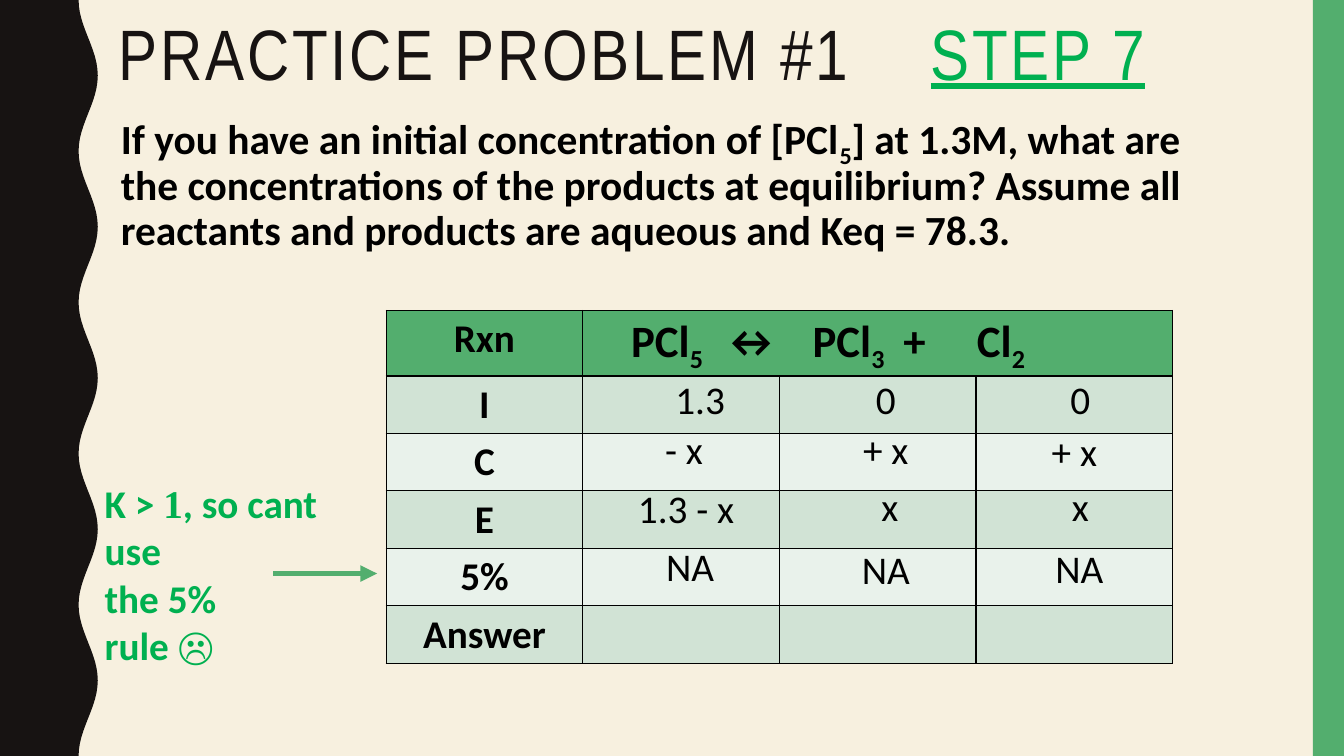
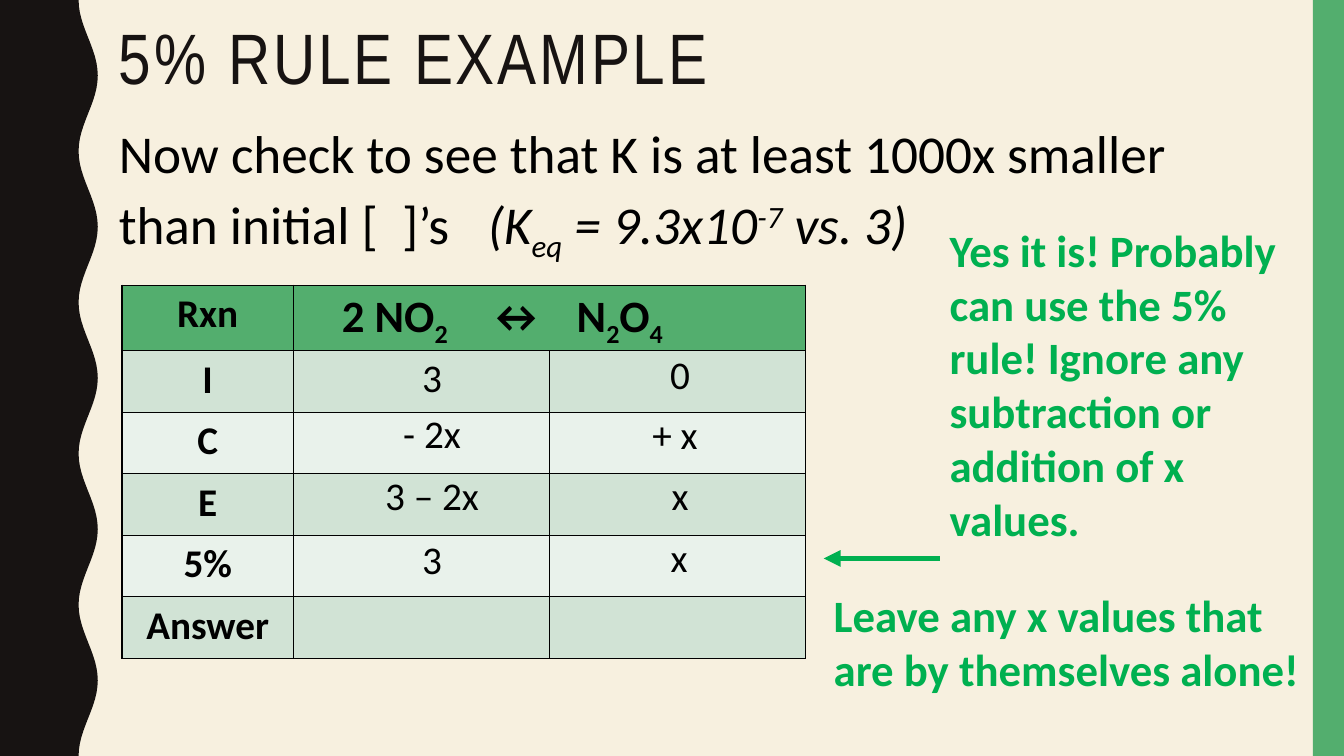
import math
from lxml import etree
from pptx import Presentation
from pptx.util import Inches, Pt
from pptx.dml.color import RGBColor
from pptx.enum import shapes, text
from pptx.oxml import ns

INK, LEAF, NOTE, BLACK = "171312", "53AE6E", "00B050", "000000"
CREAM, DARK, PALE = "F7F0DF", "D1E3D5", "E9F2EB"
WIDE, HIGH = 13.33, 7.5
MID, LEFT = text.PP_ALIGN.CENTER, text.PP_ALIGN.LEFT
TITLE = dict(size=51, font="Arial Narrow", color=INK, space=200, line=0.9)
CALL = dict(color=NOTE, bold=True)


def rgb(code):
    return RGBColor.from_string(code)


def node(up, tag, **attrs):
    return etree.SubElement(up, ns.qn(tag), attrs)


def paint(fill, code):
    fill.solid()
    fill.fore_color.rgb = rgb(code)


def down(words):
    return words, dict(base=-25)


def style(run, size=28, font="Calibri", color=BLACK, bold=False,
          italic=False, under=False, base=0, space=0):
    face = run.font
    face.size, face.name = Pt(size), font
    face.bold, face.italic, face.underline = bold, italic, under
    face.color.rgb = rgb(color)
    props = run._r.get_or_add_rPr()
    if base:
        props.set("baseline", str(base * 1000))
    if space:
        props.set("spc", str(space))


def write(frame, runs, align=LEFT, line=None, before=0, tabs=(), **fmt):
    para = frame.paragraphs[0]
    para.alignment = align
    if line:
        para.line_spacing = line
    if before:
        para.space_before = Pt(before)
    if tabs:
        stops = node(para._p.get_or_add_pPr(), "a:tabLst")
        for stop in tabs:
            node(stops, "a:tab", pos=str(Inches(stop)), algn="l")
    for part in [runs] if isinstance(runs, str) else runs:
        words, extra = (part, {}) if isinstance(part, str) else part
        for i, row in enumerate(words.split("\n")):
            if i:
                para.add_line_break()
            run = para.add_run()
            run.text = row
            style(run, **{**fmt, **extra})


def label(slide, box, runs, **fmt):
    frame = slide.shapes.add_textbox(*map(Inches, box)).text_frame
    frame.word_wrap = True
    write(frame, runs, **fmt)


def plain(shape, code):
    shape.shadow.inherit = False
    paint(shape.fill, code)
    shape.line.fill.background()


def bands(slide):
    steps = 120
    edge = []
    for i in range(steps + 1):
        y = HIGH * i / steps
        x = 0.875 - 0.095 * math.cos(2 * math.pi * y / 1.5)
        edge.append((Inches(x), Inches(y)))
    wave = slide.shapes.build_freeform(0, 0)
    wave.add_line_segments(edge + [(0, Inches(HIGH))], close=True)
    plain(wave.convert_to_shape(), INK)
    box = map(Inches, (13.02, 0, WIDE - 13.02, HIGH))
    plain(slide.shapes.add_shape(shapes.MSO_SHAPE.RECTANGLE, *box), LEAF)


def start(deck, top, runs, **fmt):
    slide = deck.slides.add_slide(deck.slide_layouts[5])
    bands(slide)
    head = slide.shapes.title
    head.left, head.top, head.width, head.height = map(
        Inches, (1.08, top, 11.13, 1.63))
    frame = head.text_frame
    frame.auto_size = text.MSO_AUTO_SIZE.NONE
    frame.vertical_anchor = text.MSO_ANCHOR.TOP
    write(frame, runs, **TITLE, **fmt)
    return slide


def arrow(slide, x, y, end, code):
    link = slide.shapes.add_connector(
        shapes.MSO_CONNECTOR.STRAIGHT, *map(Inches, (x, y, end, y)))
    link.line.color.rgb = rgb(code)
    link.line.width = Pt(4)
    node(link.line._get_or_add_ln(), "a:tailEnd", type="triangle")
    node(link._element.spPr, "a:effectLst")


def border(cell):
    props = cell._tc.get_or_add_tcPr()
    for side in "LRTB":
        rule = node(props, "a:ln" + side, w=str(Pt(1)))
        node(node(rule, "a:solidFill"), "a:srgbClr", val=BLACK)


def chart(slide, x, y, cols, step, head, tabs, values):
    names = ["Rxn", "I", "C", "E", "5%", "Answer"]
    rows = [0.65] + [step] * 5
    box = map(Inches, (x, y, sum(cols), sum(rows)))
    grid = slide.shapes.add_table(len(rows), len(cols), *box).table
    for col, wide in zip(grid.columns, cols):
        col.width = Inches(wide)
    for i, (name, high) in enumerate(zip(names, rows)):
        grid.rows[i].height = Inches(high)
        for j in range(len(cols)):
            cell = grid.cell(i, j)
            border(cell)
            paint(cell.fill, LEAF if i == 0 else DARK if i % 2 else PALE)
        write(grid.cell(i, 0).text_frame, name, align=MID, bold=True)
    span = grid.cell(0, 1)
    span.merge(grid.cell(0, len(cols) - 1))
    span.vertical_anchor = text.MSO_ANCHOR.MIDDLE
    span.margin_left, span.margin_right = Inches(0.48), Inches(0.07)
    span.margin_top = span.margin_bottom = 0
    write(span.text_frame, head, size=32, bold=True, line=1.07, tabs=tabs)
    for words, dx, dy in values:
        label(slide, (x + dx, y + dy, 1.23, 0.57), words, align=MID)


def problem(deck):
    slide = start(deck, 0.14, ["PRACTICE PROBLEM #1\t",
                               ("STEP 7", dict(color=NOTE, under=True))],
                  tabs=[8.05])
    label(slide, (1.1, 1.08, 11.13, 2.08),
          ["If you have an initial concentration of [PCl", down("5"),
           "] at 1.3M, what are the concentrations of the products at "
           "equilibrium? Assume all reactants and products are aqueous "
           "and Keq = 78.3."],
          size=29.6, bold=True, line=0.9, before=7)
    chart(slide, 3.83, 3.08, [1.95] * 4, 0.57,
          ["PCl", down("5"), "\t↔\tPCl", down("3"), "\t+\tCl", down("2")],
          [0.9, 1.8, 2.7, 3.43],
          [("1.3", 2.5, 0.59), ("0", 4.34, 0.59), ("0", 6.27, 0.59),
           ("- x", 2.34, 1.09), ("+ x", 4.34, 1.09), ("+ x", 6.21, 1.11),
           ("1.3 - x", 2.36, 1.68), ("x", 4.38, 1.66), ("x", 6.27, 1.66),
           ("NA", 2.4, 2.25), ("NA", 4.34, 2.28), ("NA", 6.26, 2.27)])
    label(slide, (0.94, 4.71, 2.56, 1.99),
          ["K > ", ("1", dict(font="Times New Roman")),
           ", so cant use \nthe 5% \nrule ☹"], **CALL)
    arrow(slide, 2.71, 5.69, 3.74, LEAF)


def example(deck):
    slide = start(deck, 0.18, "5% RULE EXAMPLE")
    tilt = dict(italic=True)
    label(slide, (1.08, 1.08, 11.13, 1.7),
          ["Now check to see that K is at least 1000x smaller than "
           "initial [  ]’s\t", ("(K", tilt), ("eq", dict(tilt, base=-25)),
           (" = 9.3x10", tilt), ("-7", dict(tilt, base=30)),
           (" vs. 3)", tilt)],
          size=38, line=1.1, before=7, tabs=[3.66])
    label(slide, (9.32, 2.16, 3.7, 3.87),
          "Yes it is! Probably can use the 5% rule! Ignore any "
          "subtraction or addition of x values.", size=32, **CALL)
    chart(slide, 1.21, 2.83, [1.7, 2.54, 2.54], 0.61,
          ["2 NO", down("2"), "\t↔\tN", down("2"), "O", down("4")],
          [1.44, 2.33],
          [("3", 2.46, 0.63), ("0", 4.92, 0.6),
           ("- 2x", 2.46, 1.18), ("+ x", 4.87, 1.19),
           ("3 – 2x", 2.46, 1.8), ("x", 4.92, 1.8),
           ("3", 2.46, 2.43), ("x", 4.91, 2.41)])
    arrow(slide, 9.32, 5.54, 8.17, NOTE)
    label(slide, (8.17, 5.78, 4.85, 1.72),
          "Leave any x values that are by themselves alone!",
          size=32, **CALL)


def main():
    deck = Presentation()
    deck.slide_width, deck.slide_height = Inches(WIDE), Inches(HIGH)
    paint(deck.slide_master.background.fill, CREAM)
    problem(deck)
    example(deck)
    deck.save("out.pptx")


if __name__ == "__main__":
    main()
